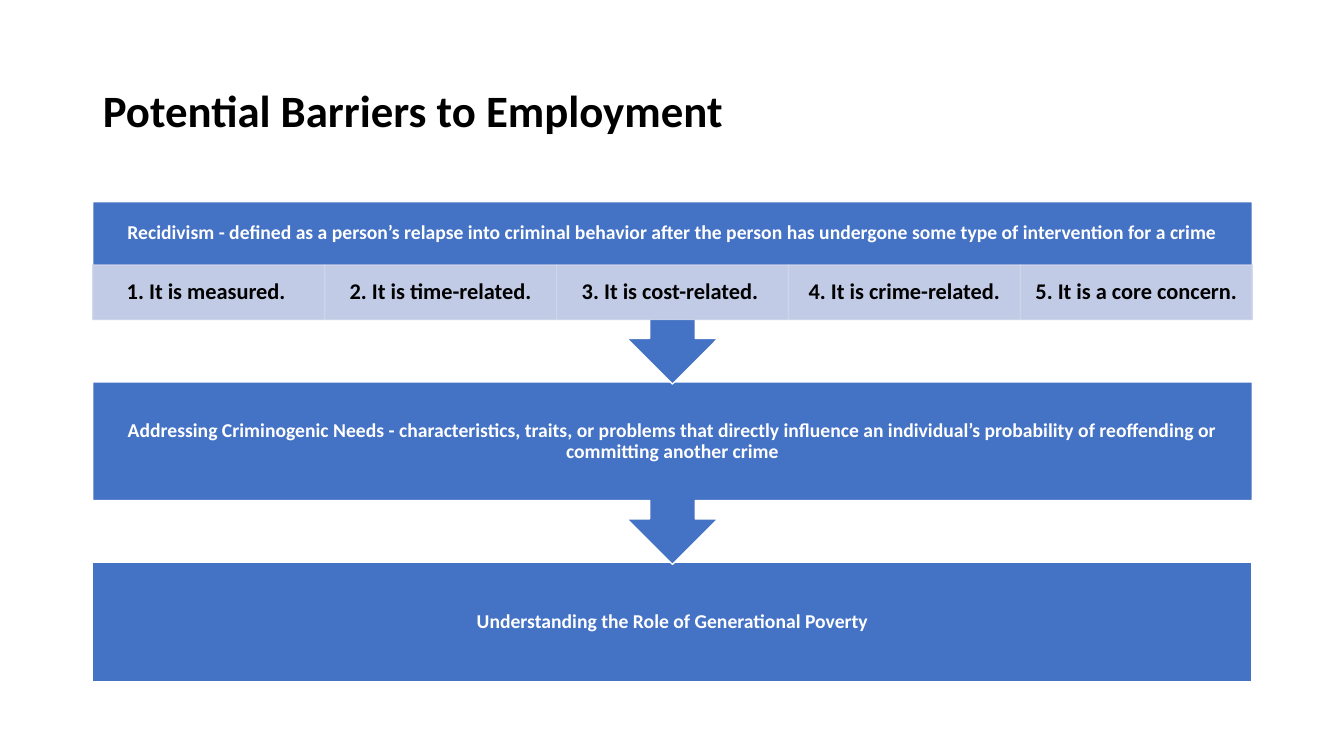
from dataclasses import dataclass

from lxml.etree import SubElement
from pptx import Presentation
from pptx.dml.color import RGBColor
from pptx.enum.shapes import MSO_SHAPE as Shape
from pptx.enum.text import MSO_ANCHOR as Anchor, PP_ALIGN as Align
from pptx.oxml.ns import qn
from pptx.util import Inches, Pt


@dataclass(frozen=True)
class Theme:
    font: str = "Calibri"
    blue: RGBColor = RGBColor(0x44, 0x72, 0xC4)
    pale: RGBColor = RGBColor(0xCF, 0xD5, 0xEA)
    white: RGBColor = RGBColor(0xFF, 0xFF, 0xFF)
    black: RGBColor = RGBColor(0, 0, 0)
    title_size: int = 32
    band_size: int = 14
    cell_size: int = 16
    cell_opacity: int = 90


THEME = Theme()

TITLE = "Potential Barriers to Employment"
RECIDIVISM = ("Recidivism - defined as a person’s relapse into criminal behavior after "
              "the person has undergone some type of intervention for a crime")
NEEDS = ("Addressing Criminogenic Needs - characteristics, traits, or problems that directly "
         "influence an individual’s probability of reoffending or committing another crime")
POVERTY = "Understanding the Role of Generational Poverty"
FEATURES = ["1. It is measured. ", "2. It is time-related.", "3. It is cost-related. ",
            "4. It is crime-related.", "5. It is a core concern."]


def write(shape, text, size, color, align):
    frame = shape.text_frame
    frame.word_wrap = True
    frame.vertical_anchor = Anchor.MIDDLE
    frame.text = text
    paragraph = frame.paragraphs[0]
    paragraph.alignment = align
    paragraph.line_spacing = 0.9
    font = paragraph.font
    font.name, font.size, font.bold = THEME.font, Pt(size), True
    font.color.rgb = color


def set_insets(shape, side, top, bottom):
    frame = shape.text_frame
    frame.margin_left = frame.margin_right = Inches(side)
    frame.margin_top, frame.margin_bottom = Inches(top), Inches(bottom)


def add_block(slide, kind, box, fill, line):
    shape = slide.shapes.add_shape(kind, *(Inches(length) for length in box))
    shape.shadow.inherit = False
    shape.fill.solid()
    shape.fill.fore_color.rgb = fill
    shape.line.color.rgb = line
    shape.line.width = Pt(1)
    return shape


def add_title(slide, box):
    title = slide.shapes.title
    title.left, title.top, title.width, title.height = (Inches(length) for length in box)
    write(title, TITLE, THEME.title_size, THEME.black, Align.LEFT)


def add_band(slide, kind, box, text, covered=0):
    """Add a blue band; covered is the height at its foot kept free of text."""
    band = add_block(slide, kind, box, THEME.blue, THEME.white)
    write(band, text, THEME.band_size, THEME.white, Align.CENTER)
    set_insets(band, 0.11, 0.11, 0.11 + covered)


def add_features(slide, box):
    left, top, width, height = box
    cell_width = width / len(FEATURES)
    for index, text in enumerate(FEATURES):
        cell_box = (left + index * cell_width, top, cell_width, height)
        cell = add_block(slide, Shape.RECTANGLE, cell_box, THEME.pale, THEME.pale)
        # Let the band behind show through fill and outline
        for color in cell._element.spPr.iter(qn("a:srgbClr")):
            SubElement(color, qn("a:alpha"), val=str(THEME.cell_opacity * 1000))
        write(cell, text, THEME.cell_size, THEME.black, Align.CENTER)
        set_insets(cell, 0.12, 0.02, 0.02)


def add_process(slide, box):
    left, top, width, height = box
    pitch, callout_height, last_height = 1.79, 1.81, 1.18
    cells_top, cells_height = 0.63, 0.54

    # Bands from the bottom up, so that each arrow tip lies over the next band
    add_band(slide, Shape.RECTANGLE,
             (left, top + height - last_height, width, last_height), POVERTY)
    add_band(slide, Shape.DOWN_ARROW_CALLOUT,
             (left, top + pitch, width, callout_height), NEEDS)
    add_band(slide, Shape.DOWN_ARROW_CALLOUT,
             (left, top, width, callout_height), RECIDIVISM, covered=cells_height)

    # Features of recidivism
    add_features(slide, (left, top + cells_top, width, cells_height))


def main():
    presentation = Presentation()
    presentation.slide_width, presentation.slide_height = Inches(13.33), Inches(7.5)
    slide = presentation.slides.add_slide(presentation.slide_layouts.get_by_name("Title Only"))
    add_title(slide, (0.92, 0.4, 11.5, 1.45))
    add_process(slide, (0.92, 2, 11.5, 4.76))
    presentation.save("out.pptx")


if __name__ == "__main__":
    main()
